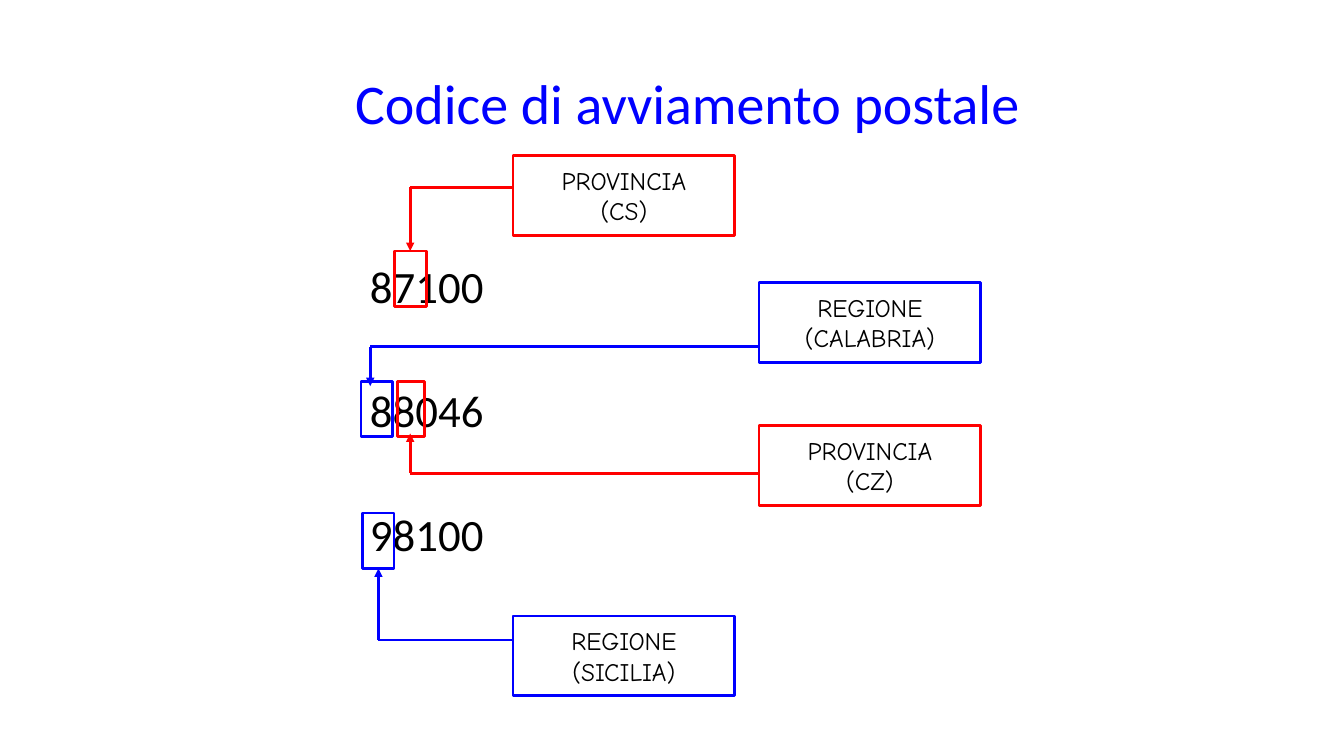
from lxml.etree import SubElement
from pptx import Presentation
from pptx.dml.color import RGBColor
from pptx.enum.shapes import MSO_CONNECTOR as Connector, MSO_SHAPE as Shape
from pptx.enum.text import MSO_ANCHOR as Anchor, PP_ALIGN as Align
from pptx.oxml.ns import qn
from pptx.util import Pt

RED, BLUE, BLACK = "FF0000", "0000FF", "000000"


def color(hex_value):
    return RGBColor.from_string(hex_value)


class PostalSlide:
    """Style and drawing methods for the slide."""

    line_width = 2
    frame_height = 39.6
    label_size = (158.4, 56.9)

    def __init__(self, slide):
        self.shapes = slide.shapes

    def fill_text(self, frame, lines, font, size, text_color, align, gap=0, **settings):
        for name, value in settings.items():
            setattr(frame, name, value)
        for index, line in enumerate(lines):
            paragraph = frame.add_paragraph() if index else frame.paragraphs[0]
            paragraph.text = line
            paragraph.alignment = align
            paragraph.space_before = Pt(gap if index else 0)
            for name, value in {"name": font, "size": Pt(size)}.items():
                setattr(paragraph.font, name, value)
            paragraph.font.color.rgb = color(text_color)

    def text(self, left, top, width, height, lines, **style):
        box = self.shapes.add_textbox(Pt(left), Pt(top), Pt(width), Pt(height))
        self.fill_text(box.text_frame, lines, "Calibri", word_wrap=True, **style)

    def frame(self, left, top, width, height, line_color):
        rect = self.shapes.add_shape(Shape.RECTANGLE, Pt(left), Pt(top), Pt(width), Pt(height))
        rect.shadow.inherit = False
        rect.fill.background()
        rect.line.color.rgb = color(line_color)
        rect.line.width = Pt(self.line_width)
        return rect

    def label(self, left, top, lines, line_color):
        rect = self.frame(left, top, *self.label_size, line_color)
        self.fill_text(rect.text_frame, lines, "Comic Neue", 18, BLACK, Align.CENTER,
                       word_wrap=False, vertical_anchor=Anchor.MIDDLE)

    def line(self, start, end, line_color, arrow=False):
        link = self.shapes.add_connector(Connector.STRAIGHT, *map(Pt, start + end))
        link.line.color.rgb = color(line_color)
        link.line.width = Pt(self.line_width)
        properties = link._element.spPr
        if arrow:
            SubElement(properties.find(qn("a:ln")), qn("a:tailEnd"), type="triangle")
        SubElement(properties, qn("a:effectLst"))

    def elbow(self, label_left, corner, digit_y, line_color):
        """Line from a label to the corner, then an arrow to the digit."""
        self.line(corner, (corner[0], digit_y), line_color, arrow=True)
        self.line(corner, (label_left, corner[1]), line_color)


def main():
    deck = Presentation()
    deck.slide_width, deck.slide_height = Pt(960), Pt(540)
    postal = PostalSlide(deck.slides.add_slide(deck.slide_layouts[6]))

    # Title
    postal.text(185, 15, 612, 116, ["Codice di avviamento postale"], size=40,
                text_color=BLUE, align=Align.CENTER, vertical_anchor=Anchor.MIDDLE)

    # Postal codes
    postal.text(264.3, 184.7, 520, 300, ["87100", "88046", "98100"], size=32,
                text_color=BLACK, align=Align.LEFT, gap=50.3,
                margin_left=0, margin_top=0)

    # Frames around the digits
    for left, top, width, line_color in [
        (281.5, 179.3, 23, RED),
        (259.2, 366.5, 22.3, BLUE),
        (257.8, 272.2, 22.3, BLUE),
        (283.7, 272.2, 19.4, RED),
    ]:
        postal.frame(left, top, width, postal.frame_height, line_color)

    # Labels, each with its elbow to a digit
    near, far = 366.5, 542.2
    for left, top, lines, corner, digit_y, line_color in [
        (near, 111.3, ["PROVINCIA", "(CS)"], (293, 133.9), 179.3, RED),
        (far, 202, ["REGIONE", "(CALABRIA)"], (264.5, 247.7), 275.8, BLUE),
        (far, 304, ["PROVINCIA", "(CZ)"], (293, 338), 309.6, RED),
        (near, 440, ["REGIONE", "(SICILIA)"], (270.3, 457.2), 406.1, BLUE),
    ]:
        postal.elbow(left, corner, digit_y, line_color)
        postal.label(left, top, lines, line_color)

    deck.save("out.pptx")


if __name__ == "__main__":
    main()
